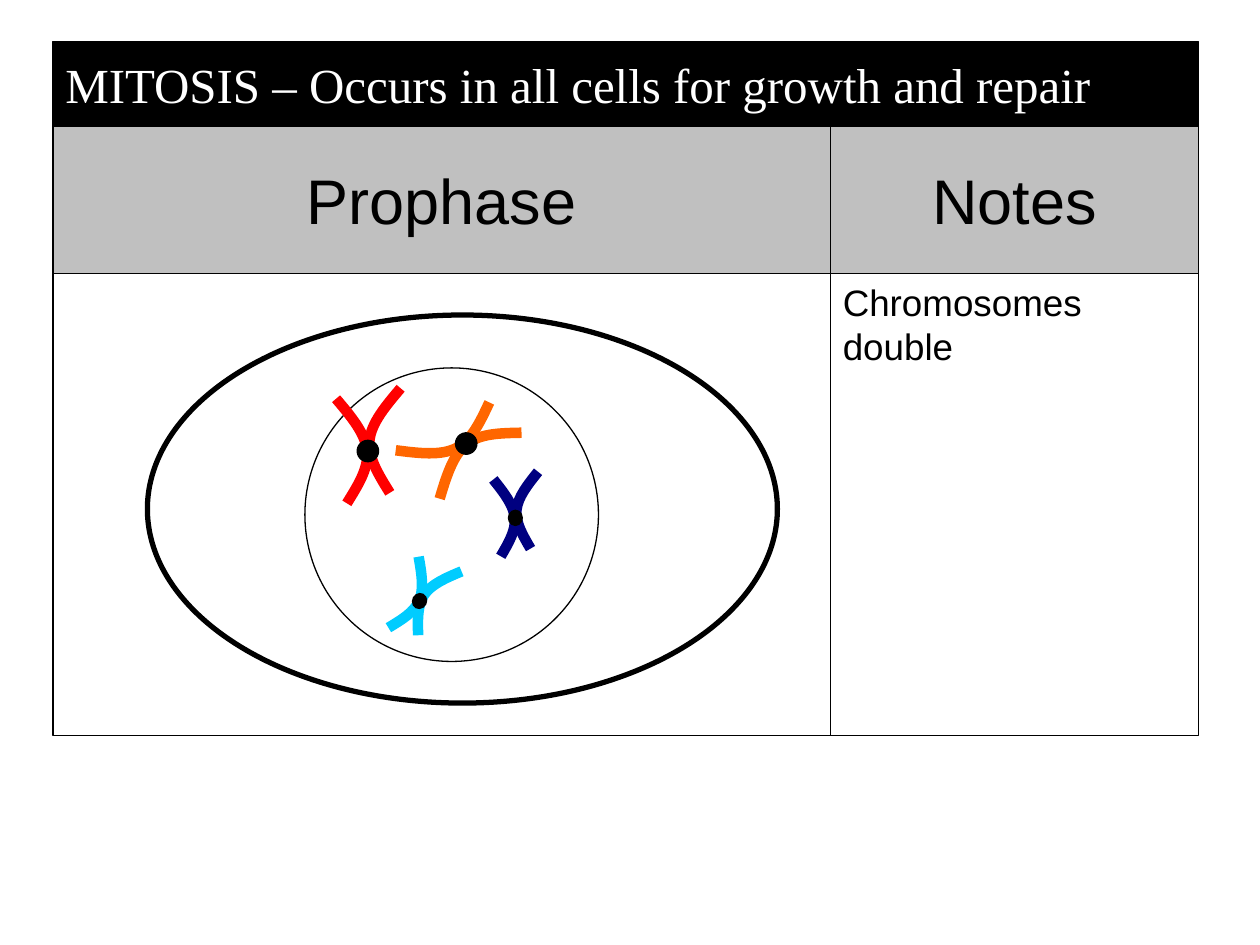
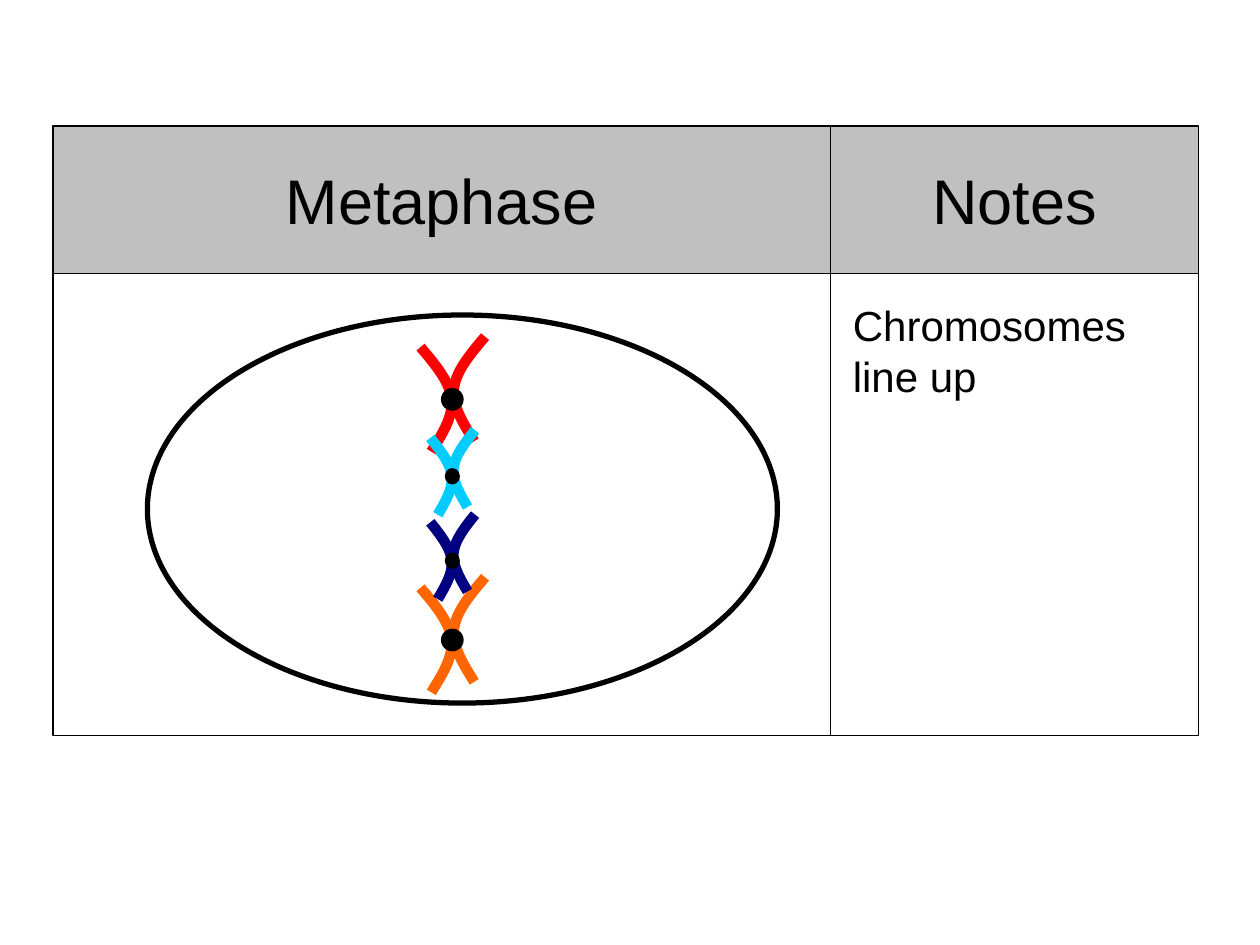
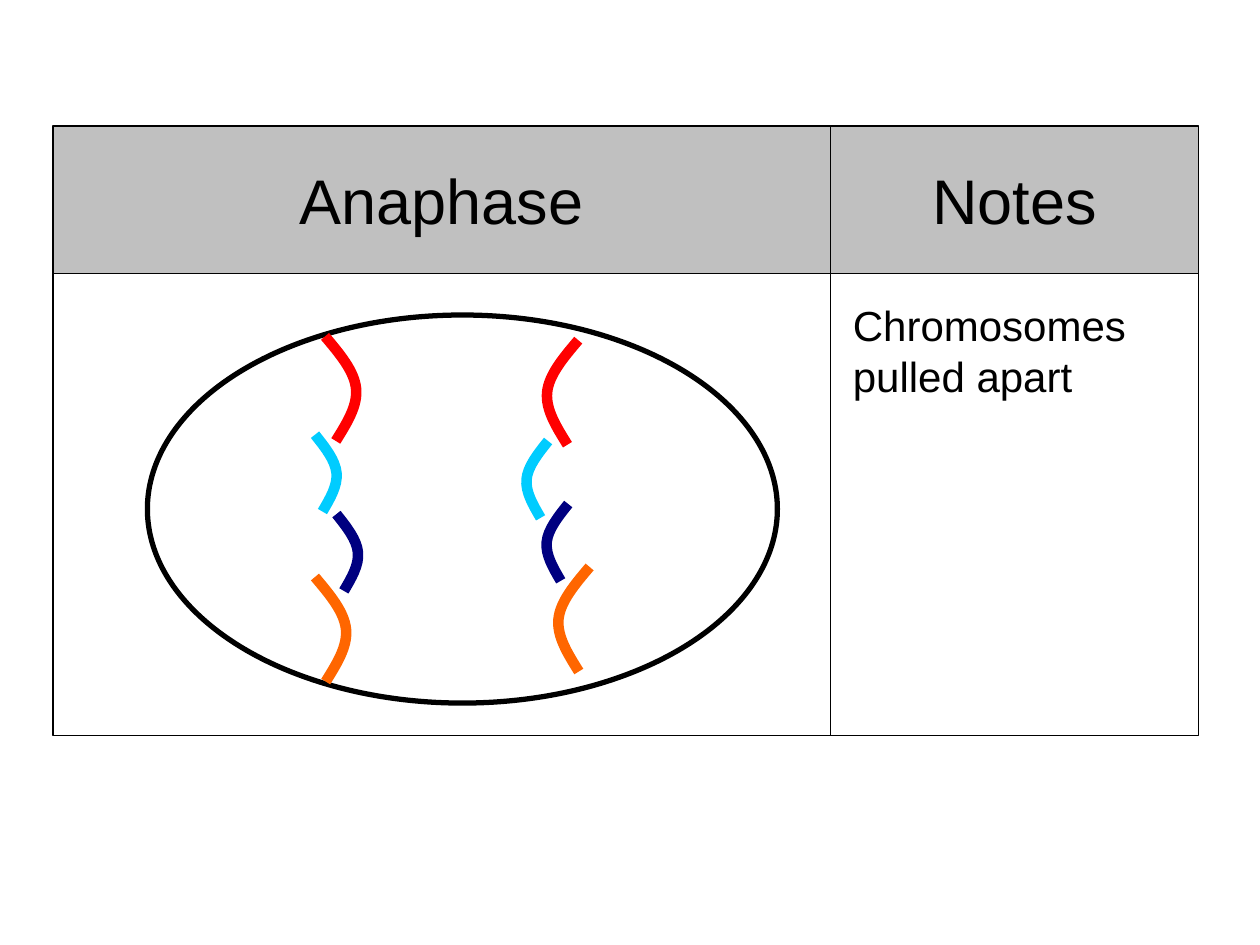
"""Build three slides on the phases of mitosis."""
import math

import pptx
import pptx.dml.color
import pptx.enum.shapes
import pptx.enum.text
import pptx.oxml.ns
import pptx.util

Inches = pptx.util.Inches
RGBColor = pptx.dml.color.RGBColor
SHAPE = pptx.enum.shapes.MSO_SHAPE
ALIGN = pptx.enum.text.PP_ALIGN
ANCHOR = pptx.enum.text.MSO_ANCHOR
qn = pptx.oxml.ns.qn

BLACK = RGBColor(0x00, 0x00, 0x00)
WHITE = RGBColor(0xFF, 0xFF, 0xFF)
GREY = RGBColor(0xC0, 0xC0, 0xC0)
RED = RGBColor(0xFF, 0x00, 0x00)
ORANGE = RGBColor(0xFF, 0x66, 0x00)
NAVY = RGBColor(0x00, 0x00, 0x80)
CYAN = RGBColor(0x00, 0xCC, 0xFF)

LEFT, TOP = 0.42, 1
DIAGRAM_W, NOTES_W = 6.17, 2.92
HEADER_H, BODY_H = 1.17, 3.67
NOTES_LEFT, BODY_TOP = LEFT + DIAGRAM_W, TOP + HEADER_H

LONG, SHORT = (0.26, 0.83), (0.18, 0.61)
CENTROMERE = {LONG: (0.17, 0.17), SHORT: (0.11, 0.12)}
CHROMATID_X = (0, 0.45, 0.9, 0.95, 1, 0.66, 0.33)
KINDS = ((RED, LONG), (ORANGE, LONG), (NAVY, SHORT), (CYAN, SHORT))

PROPHASE = ((1.75, 1.08, 0), (2.53, 1.02, 237), (2.92, 1.61, 0), (2.16, 2.27, 28.6))
METAPHASE = tuple((2.42, y, 0) for y in (0.67, 2.58, 1.95, 1.28))
ANAPHASE = (
    ((1.41, 0.17), (3.16, 0.2)),
    ((1.33, 2.08), (3.25, 2)),
    ((1.5, 1.58), (3.16, 1.5)),
    ((1.33, 0.95), (3, 1)),
)


def add_shape(shapes, kind, box, fill=None, width=0.75):
    """Add an outlined preset shape, filled if a colour is given."""
    sp = shapes.add_shape(kind, *map(Inches, box))
    sp.shadow.inherit = False
    if fill is None:
        sp.fill.background()
    else:
        sp.fill.solid()
        sp.fill.fore_color.rgb = fill
    sp.line.color.rgb = BLACK
    sp.line.width = pptx.util.Pt(width)
    return sp


def write(sp, text, size, font="Arial", color=BLACK, align=ALIGN.LEFT):
    """Write one wrapped paragraph into a shape."""
    tf = sp.text_frame
    tf.word_wrap = True
    p = tf.paragraphs[0]
    p.text = text
    p.alignment = align
    p.font.size = pptx.util.Pt(size)
    p.font.name = font
    p.font.color.rgb = color


def add_band(s, box, text, fill, size, **style):
    """Add a filled rectangle with vertically centred text."""
    sp = add_shape(s.shapes, SHAPE.RECTANGLE, box, fill)
    write(sp, text, size, **style)
    sp.text_frame.vertical_anchor = ANCHOR.MIDDLE


def add_frame(prs, phase):
    """Add a slide with the headed diagram and notes columns."""
    s = prs.slides.add_slide(prs.slide_layouts[6])
    columns = ((LEFT, DIAGRAM_W, phase), (NOTES_LEFT, NOTES_W, "Notes"))
    for left, width, _ in columns:
        add_shape(s.shapes, SHAPE.RECTANGLE, (left, BODY_TOP, width, BODY_H))
    for left, width, text in columns:
        add_band(s, (left, TOP, width, HEADER_H), text, GREY, 36, align=ALIGN.CENTER)
    return s


def add_notes(s, text, box=(6.67, 2.33, 2.58, 0.91), size=24):
    """Add the note beside the diagram."""
    write(s.shapes.add_textbox(*map(Inches, box)), text, size)


def add_cell(s, left, top):
    """Add a group that holds the cell membrane."""
    cell = s.shapes.add_group_shape()
    add_shape(cell.shapes, SHAPE.OVAL, (left, top, 5, 3.08), width=3)
    return cell.shapes


def add_chromatid(shapes, left, top, size, color, mirrored=False, rotation=0):
    """Draw a chromatid as two joined Bezier curves in a box."""
    w, h = size
    xs = [1 - x if mirrored else x for x in CHROMATID_X]
    points = [(Inches(left + x * w), Inches(top + i * h / 6)) for i, x in enumerate(xs)]
    builder = shapes.build_freeform(*points[0])
    builder.add_line_segments(points[1:], close=False)
    sp = builder.convert_to_shape()
    segments = list(sp._element.iter(qn("a:lnTo")))
    for i in range(0, len(segments), 3):
        curve = segments[i].makeelement(qn("a:cubicBezTo"))
        segments[i].addprevious(curve)
        for segment in segments[i:i + 3]:
            curve.append(segment[0])
            segment.getparent().remove(segment)
    sp.shadow.inherit = False
    sp.fill.background()
    sp.line.color.rgb = color
    sp.line.width = pptx.util.Pt(6)
    sp.rotation = rotation


def add_chromosome(shapes, x, y, size, color, rotation):
    """Draw two chromatids joined at a centromere centred on x, y."""
    w, h = size
    cos, sin = math.cos(math.radians(rotation)), math.sin(math.radians(rotation))
    for dx, dy, mirrored in ((-0.47 * w, 0, False), (0.5 * w, -0.1 * h, True)):
        left = x + dx * cos - dy * sin - w / 2
        top = y + dx * sin + dy * cos - h / 2
        add_chromatid(shapes, left, top, size, color, mirrored, rotation)
    dot_w, dot_h = CENTROMERE[size]
    box = (x - dot_w / 2, y - dot_h / 2, dot_w, dot_h)
    add_shape(shapes, SHAPE.OVAL, box, BLACK).rotation = rotation


def draw_doubled(s, left, top, places, nucleus=False):
    """Draw a cell with doubled chromosomes."""
    shapes = add_cell(s, left, top)
    if nucleus:
        add_shape(shapes, SHAPE.OVAL, (left + 1.25, top + 0.42, 2.33, 2.33))
    for (color, size), (x, y, rotation) in zip(KINDS, places):
        add_chromosome(shapes, left + x, top + y, size, color, rotation)


def draw_separated(s, left, top, places):
    """Draw a cell with the chromatids of each pair pulled apart."""
    shapes = add_cell(s, left, top)
    for (color, size), pair in zip(KINDS, places):
        for (x, y), mirrored in zip(pair, (False, True)):
            add_chromatid(shapes, left + x, top + y, size, color, mirrored)


def main():
    """Build and save the presentation."""
    prs = pptx.Presentation()
    prs.slide_width, prs.slide_height = Inches(10), Inches(7.5)
    cell_at = (LEFT + 0.75, BODY_TOP + 0.33)

    s = add_frame(prs, "Prophase")
    draw_doubled(s, *cell_at, PROPHASE, nucleus=True)
    add_band(s, (LEFT, 0.33, DIAGRAM_W + NOTES_W, 0.67),
             "MITOSIS – Occurs in all cells for growth and repair",
             BLACK, 28, font="Times New Roman", color=WHITE)
    add_notes(s, "Chromosomes double", (NOTES_LEFT, BODY_TOP, NOTES_W, 1.5), 21)

    s = add_frame(prs, "Metaphase")
    draw_doubled(s, *cell_at, METAPHASE)
    add_notes(s, "Chromosomes line up")

    s = add_frame(prs, "Anaphase")
    draw_separated(s, *cell_at, ANAPHASE)
    add_notes(s, "Chromosomes pulled apart")

    prs.save("out.pptx")


if __name__ == "__main__":
    main()
